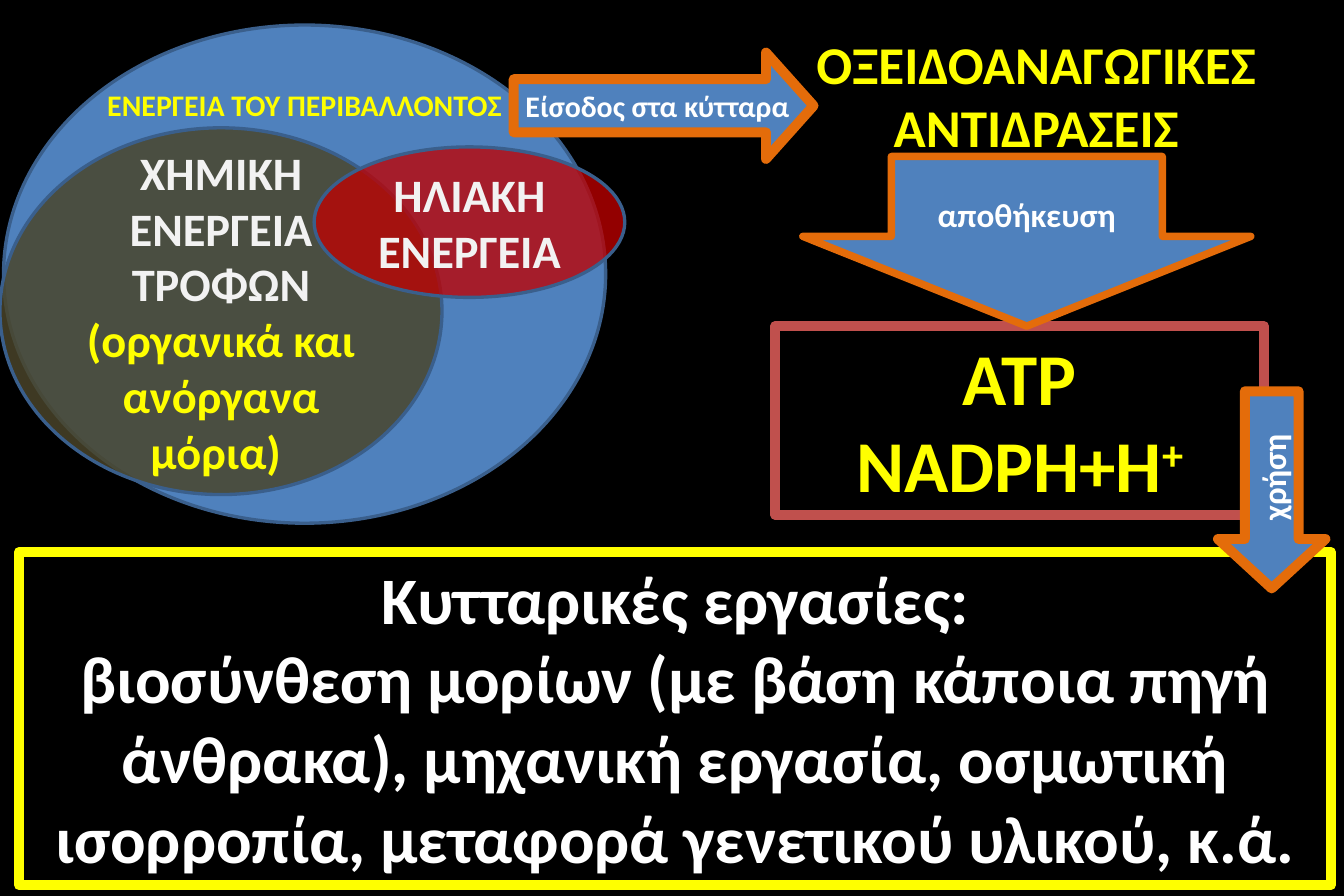
from pptx import Presentation
from pptx.dml.color import RGBColor
from pptx.enum.shapes import MSO_SHAPE
from pptx.enum.text import MSO_ANCHOR, PP_ALIGN
from pptx.oxml.ns import qn
from pptx.util import Inches, Pt
from lxml import etree

OVAL, RECTANGLE = MSO_SHAPE.OVAL, MSO_SHAPE.RECTANGLE
RIGHT_ARROW, DOWN_ARROW = MSO_SHAPE.RIGHT_ARROW, MSO_SHAPE.DOWN_ARROW
TOP, MIDDLE, BOTTOM = MSO_ANCHOR.TOP, MSO_ANCHOR.MIDDLE, MSO_ANCHOR.BOTTOM
LEFT, CENTER = PP_ALIGN.LEFT, PP_ALIGN.CENTER

BLACK = RGBColor(0x00, 0x00, 0x00)
WHITE = RGBColor(0xFF, 0xFF, 0xFF)
OFF_WHITE = RGBColor(0xF2, 0xF2, 0xF2)
YELLOW = RGBColor(0xFF, 0xFF, 0x00)
BLUE = RGBColor(0x4F, 0x81, 0xBD)
DARK_BLUE = RGBColor(0x3A, 0x5F, 0x8C)
ORANGE = RGBColor(0xE4, 0x6C, 0x0A)
BRICK = RGBColor(0xC0, 0x50, 0x4D)
RED = RGBColor(0xC0, 0x00, 0x00)
OLIVE = RGBColor(0x4A, 0x45, 0x2A)
FONT = "Calibri"


def add_box(slide, kind, left, top, width, height, fill, line, line_width, opacity=100):
    """Add a preset shape; a fill of None leaves it open."""
    shape = slide.shapes.add_shape(
        kind, Inches(left), Inches(top), Inches(width), Inches(height))
    shape.shadow.inherit = False
    shape.line.color.rgb = line
    shape.line.width = Pt(line_width)
    if fill is None:
        shape.fill.background()
        return shape
    shape.fill.solid()
    shape.fill.fore_color.rgb = fill
    if opacity < 100:
        color = shape._element.spPr.find(qn("a:solidFill"))[0]
        etree.SubElement(color, qn("a:alpha"), val=str(opacity * 1000))
    return shape


def add_arrow(slide, kind, box, adjustments, line_width):
    arrow = add_box(slide, kind, *box, BLUE, ORANGE, line_width)
    for index, value in enumerate(adjustments):
        arrow.adjustments[index] = value
    return arrow


def add_label(slide, left, top, width, height):
    return slide.shapes.add_textbox(
        Inches(left), Inches(top), Inches(width), Inches(height))


def write(shape, lines, size, color, anchor=MIDDLE, align=CENTER, wrap=True):
    """Write one bold paragraph per line."""
    frame = shape.text_frame
    frame.text = "\n".join(lines)
    frame.word_wrap = wrap
    frame.vertical_anchor = anchor
    for paragraph in frame.paragraphs:
        paragraph.alignment = align
        paragraph.font.name = FONT
        paragraph.font.size = Pt(size)
        paragraph.font.bold = True
        paragraph.font.color.rgb = color
    return frame


def add_environment(slide, left, top, width, height):
    """Energy of the environment: one large oval with two inside."""
    add_box(slide, OVAL, left + 0.03, top, width, height, BLUE, DARK_BLUE, 2)

    # Entry into the cells
    entry = add_arrow(slide, RIGHT_ARROW, (left + 4.3, top + 0.23, 2.51, 0.89),
                      (0.5, 0.447), 6)
    write(entry, ["Είσοδος στα κύτταρα"], 18, WHITE, align=LEFT, wrap=False)

    # Chemical energy
    food = add_box(slide, OVAL, left, top + 0.86, 3.7, 3.07, OLIVE, DARK_BLUE, 2, 84)
    frame = write(food, ["ΧΗΜΙΚΗ ΕΝΕΡΓΕΙΑ ΤΡΟΦΩΝ "], 28, OFF_WHITE)
    molecules = frame.paragraphs[0].add_run()
    molecules.text = "(οργανικά και ανόργανα μόρια) "
    molecules.font.color.rgb = YELLOW

    # Solar energy
    sun = add_box(slide, OVAL, left + 2.63, top + 1.02, 2.6, 1.26, RED, DARK_BLUE, 2, 77)
    write(sun, ["ΗΛΙΑΚΗ ΕΝΕΡΓΕΙΑ"], 28, OFF_WHITE)

    # Caption of the large oval
    caption = add_label(slide, left + 0.78, top + 0.47, 3.54, 0.4)
    write(caption, ["ΕΝΕΡΓΕΙΑ ΤΟΥ ΠΕΡΙΒΑΛΛΟΝΤΟΣ"], 18, YELLOW, TOP, wrap=False)


def add_reactions(slide, left, top, width, height):
    """Redox reactions with the storage arrow below."""
    storage = add_arrow(slide, DOWN_ARROW, (left + 0.62, top + 1.1, 3.75, 1.42),
                        (0.605, 0.529), 4.5)
    write(storage, ["αποθήκευση"], 20, WHITE, wrap=False)
    heading = add_label(slide, left, top, width, height)
    write(heading, ["ΟΞΕΙΔΟΑΝΑΓΩΓΙΚΕΣ ΑΝΤΙΔΡΑΣΕΙΣ"], 32, YELLOW, TOP)


def add_carriers(slide, left, top, width, height):
    """Energy carriers in a frame."""
    carriers = add_box(slide, RECTANGLE, left, top, width, height, None, BRICK, 6)
    frame = write(carriers, ["ATP", "NADΡH+Η"], 44, YELLOW, TOP)
    charge = frame.paragraphs[1].add_run()
    charge.text = "+"
    charge._r.get_or_add_rPr().set("baseline", "30000")


def add_cell_work(slide, left, top, width, height):
    """Cellular work in a frame, with the usage arrow leading into it."""
    work = add_box(slide, RECTANGLE, left, top, width, height, None, YELLOW, 6)
    write(work, [
        "Κυτταρικές εργασίες:",
        "βιοσύνθεση μορίων (με βάση κάποια πηγή άνθρακα), μηχανική εργασία, "
        "οσμωτική ισορροπία, μεταφορά γενετικού υλικού, κ.ά.",
    ], 40, WHITE, TOP)

    usage = add_arrow(slide, RIGHT_ARROW, (left + 9.66, top - 0.97, 1.65, 0.9),
                      (0.5, 0.459), 6)
    usage.rotation = 90
    frame = write(usage, ["χρήση"], 20, WHITE, BOTTOM, wrap=False)
    frame._txBody.bodyPr.set("rot", str(180 * 60000))  # reads upwards


def main():
    presentation = Presentation()
    presentation.slide_width = Inches(11.25)
    presentation.slide_height = Inches(7.5)
    slide = presentation.slides.add_slide(presentation.slide_layouts[6])
    slide.background.fill.solid()
    slide.background.fill.fore_color.rgb = BLACK

    add_carriers(slide, 6.49, 2.73, 4.09, 1.58)
    add_environment(slide, 0, 0.21, 5.04, 4.17)
    add_reactions(slide, 6.1, 0.21, 5.15, 1.17)
    add_cell_work(slide, 0.16, 4.62, 10.98, 2.79)
    presentation.save("out.pptx")


if __name__ == "__main__":
    main()
